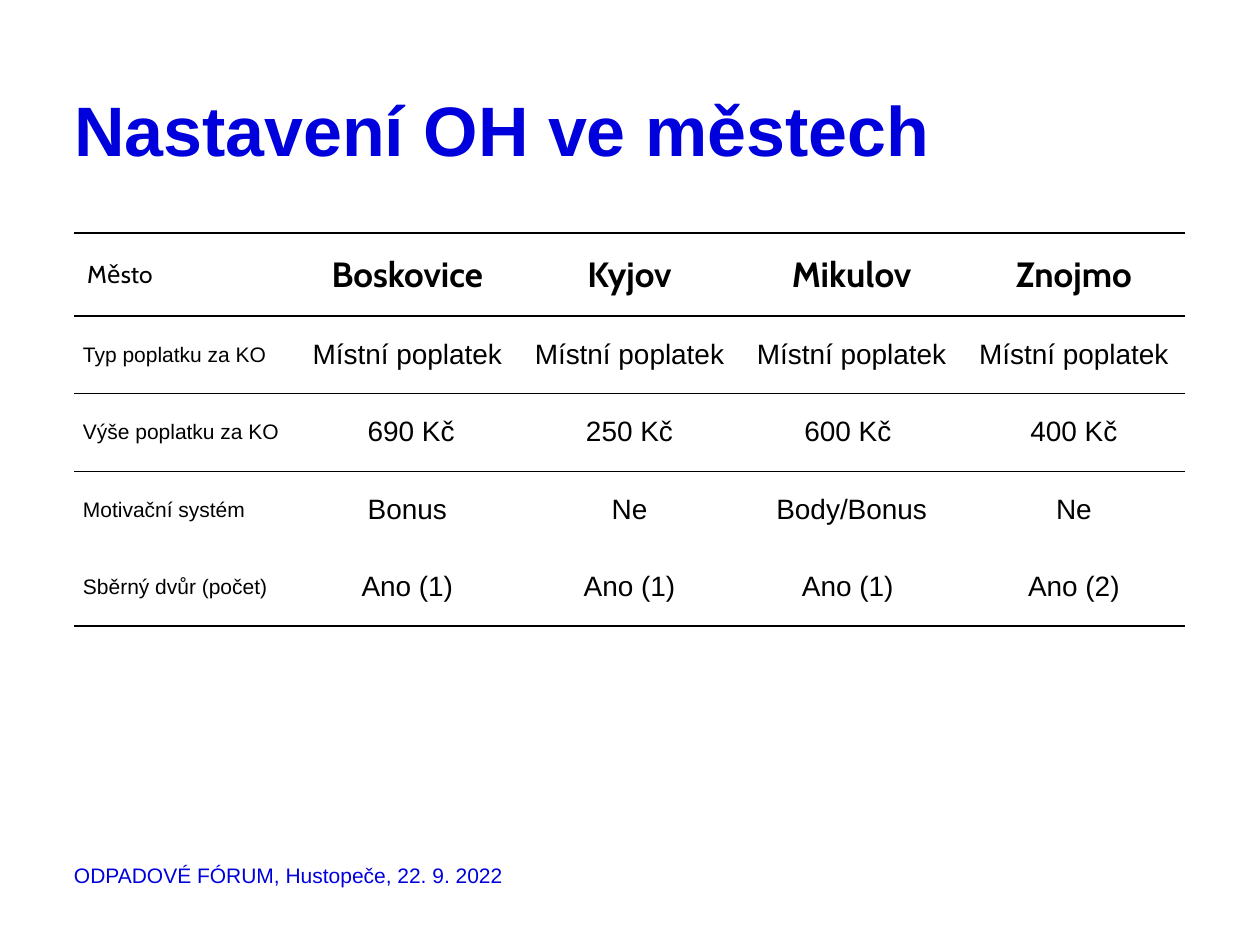
import pptx
import pptx.dml.color
import pptx.enum.text
import pptx.util
from pptx.oxml import parse_xml
from pptx.oxml.ns import nsdecls

COLORS = {"blue": "0000DC", "black": "000000"}
NO_GRID_STYLE = "{2D5ABB26-0587-4C30-8999-92F81FD0307C}"
ALIGN = pptx.enum.text.PP_ALIGN
ANCHOR = pptx.enum.text.MSO_ANCHOR

ROWS = [
    ["Město", "Boskovice", "Kyjov", "Mikulov", "Znojmo"],
    ["Typ poplatku za KO"] + ["Místní poplatek"] * 4,
    ["Výše poplatku za KO", " 690 Kč", "250 Kč", "600 Kč ", "400 Kč"],
    ["Motivační systém", "Bonus", "Ne", "Body/Bonus", "Ne"],
    ["Sběrný dvůr (počet)", "Ano (1)", "Ano (1)", "Ano (1) ", "Ano (2)"],
]


def px(n):
    return pptx.util.Emu(n * 914400 // 126)


class SlideBuilder:
    def __init__(self, slide):
        self.slide = slide

    def format(self, p, size, color="black", font="Arial", bold=False, align=ALIGN.LEFT):
        p.alignment = align
        for r in p.runs:
            r.font.name = font
            r.font.size = pptx.util.Pt(size)
            r.font.bold = bold
            r.font.color.rgb = pptx.dml.color.RGBColor.from_string(COLORS[color])

    def frame(self, sp, text, anchor):
        tf = sp.text_frame
        tf.text = text
        tf.word_wrap = True
        tf.auto_size = pptx.enum.text.MSO_AUTO_SIZE.NONE
        tf.margin_left = tf.margin_top = tf.margin_right = tf.margin_bottom = 0
        tf.vertical_anchor = anchor
        return tf.paragraphs[0]

    def title(self, text, x, y, w, h):
        sp = self.slide.shapes.title
        sp.left, sp.top, sp.width, sp.height = map(px, (x, y, w, h))
        p = self.frame(sp, text, ANCHOR.TOP)
        p.line_spacing = pptx.util.Pt(40)
        p.space_before = pptx.util.Pt(0)
        self.format(p, 40, "blue", bold=True)

    def text(self, text, x, y, w, h, size, color):
        sp = self.slide.shapes.add_textbox(*map(px, (x, y, w, h)))
        self.format(self.frame(sp, text, ANCHOR.MIDDLE), size, color)

    def border(self, cell, side, width):
        tc_pr = cell._tc.get_or_add_tcPr()
        # Border elements must come before the fill
        lines = [e for e in tc_pr if e.tag.endswith(("}lnT", "}lnB"))]
        tc_pr.insert(len(lines), parse_xml(
            f'<a:{side} {nsdecls("a")} w="{pptx.util.Pt(width)}"><a:solidFill>'
            f'<a:srgbClr val="{COLORS["black"]}"/></a:solidFill></a:{side}>'))

    def table(self, rows, x, y, w, head_h, body_h):
        n_rows, n_cols = len(rows), len(rows[0])
        frame = self.slide.shapes.add_table(
            n_rows, n_cols, px(x), px(y), px(w), px(head_h + body_h))
        table = frame.table
        table.horz_banding = False
        table._tbl.tblPr.find(pptx.oxml.ns.qn("a:tableStyleId")).text = NO_GRID_STYLE
        for col in table.columns:
            col.width = px(w) // n_cols
        for i, row in enumerate(table.rows):
            row.height = px(body_h) // (n_rows - 1) if i else px(head_h)
            for j, cell in enumerate(row.cells):
                self.cell(cell, rows[i][j], header=i == 0, label=j == 0)
                # Rules: around the header, under the first row, at the foot
                if i == 0:
                    self.border(cell, "lnT", 1)
                if i == 1:
                    self.border(cell, "lnT", 1)
                    self.border(cell, "lnB", 0.5)
                if i == 2:
                    self.border(cell, "lnT", 0.5)
                if i in (0, n_rows - 1):
                    self.border(cell, "lnB", 1)

    def cell(self, cell, text, header, label):
        cell.fill.background()
        cell.vertical_anchor = ANCHOR.MIDDLE
        cell.margin_left = cell.margin_right = px(13 if header else 9)
        cell.margin_top = cell.margin_bottom = px(6 if header else 0)
        cell.text_frame.text = text
        if header:
            size, font = (14 if label else 20), "Cabin"
        else:
            size, font = (12 if label else 16), "Arial"
        self.format(cell.text_frame.paragraphs[0], size, font=font,
                    bold=header and not label,
                    align=ALIGN.LEFT if label else ALIGN.CENTER)


def main():
    prs = pptx.Presentation()
    prs.slide_width, prs.slide_height = px(1260), px(945)
    s = SlideBuilder(prs.slides.add_slide(prs.slide_layouts[5]))

    # Footer, title and table share the left margin
    s.text("ODPADOVÉ FÓRUM, Hustopeče, 22. 9. 2022", 74, 858, 819, 35, 12, "blue")
    s.title("Nastavení OH ve městech", 74, 100, 1111, 62)
    s.table(ROWS, 74, 233, 1111, 83, 310)

    prs.save("out.pptx")


if __name__ == "__main__":
    main()
